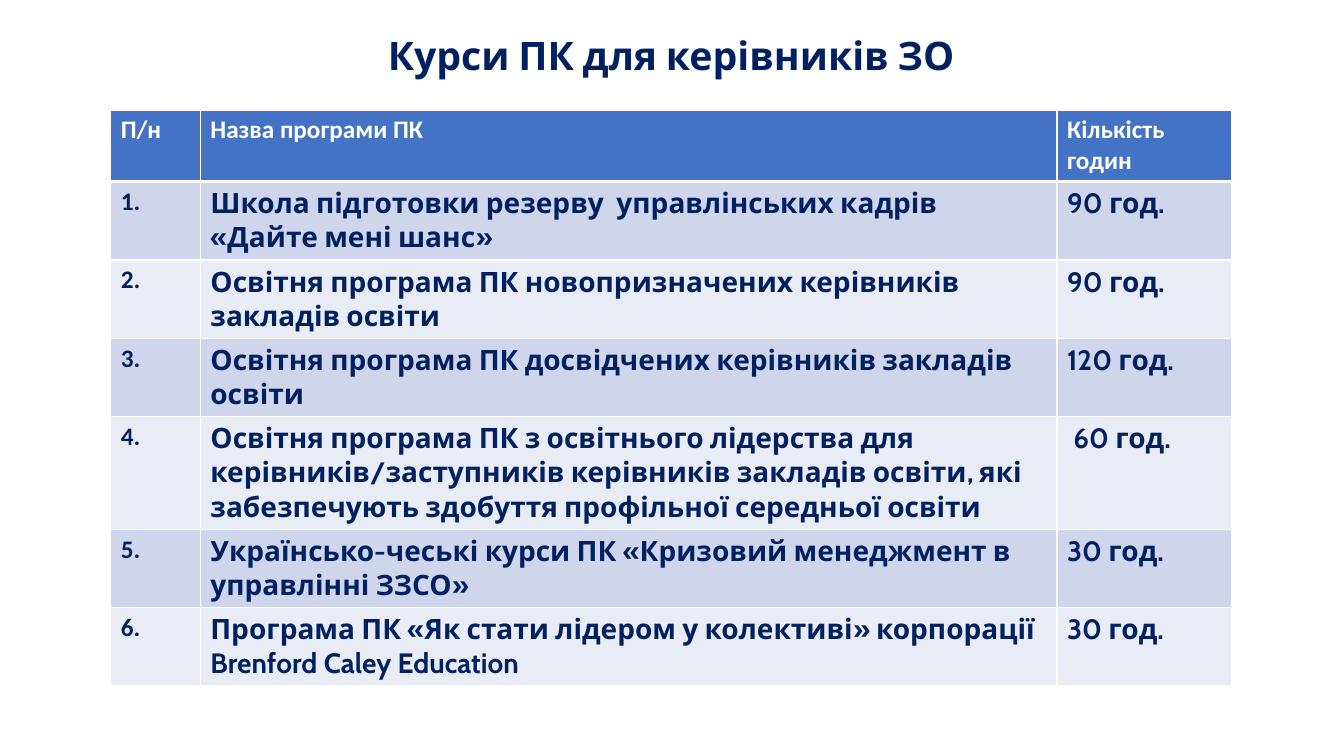
from dataclasses import dataclass

from lxml.etree import fromstring
from pptx import Presentation
from pptx.dml.color import RGBColor
from pptx.enum.text import MSO_ANCHOR, MSO_AUTO_SIZE, PP_ALIGN
from pptx.oxml.ns import nsdecls
from pptx.slide import Slide
from pptx.table import _Cell
from pptx.text.text import TextFrame
from pptx.util import Cm, Pt

NAVY, WHITE, HEADER_BLUE = "002060", "FFFFFF", "4472C4"
BANDS = ("CFD5EA", "E9EBF5")
LEFT, WIDTH = Cm(2.79), Cm(28.24)
COLUMN_WIDTHS = (2.26, 21.59, 4.39)
ROW_HEIGHT, TABLE_HEIGHT = Cm(1.03), Cm(14.3)
HEADINGS = ("П/н", "Назва програми ПК", "Кількість годин")


@dataclass(frozen=True)
class Course:
    name: str
    hours: str


@dataclass(frozen=True)
class TextStyle:
    font: str
    size: int
    color: str


HEADING_STYLE = TextStyle("Calibri", 18, WHITE)
NUMBER_STYLE = TextStyle("Calibri", 18, NAVY)
COURSE_STYLE = TextStyle("Cabin", 20, NAVY)
TITLE_STYLE = TextStyle("Cabin", 28, NAVY)

COURSES = (
    Course("Школа підготовки резерву  управлінських кадрів «Дайте мені шанс»", "90 год."),
    Course("Освітня програма ПК новопризначених керівників закладів освіти", "90 год."),
    Course("Освітня програма ПК досвідчених керівників закладів освіти", "120 год."),
    Course("Освітня програма ПК з освітнього лідерства для керівників/заступників "
           "керівників закладів освіти, які забезпечують здобуття профільної "
           "середньої освіти", " 60 год."),
    Course("Українсько-чеські курси ПК «Кризовий менеджмент в управлінні ЗЗСО»", "30 год."),
    Course("Програма ПК «Як стати лідером у колективі» корпорації "
           "Brenford Caley Education", "30 год."),
)


def rgb(color: str) -> RGBColor:
    return RGBColor.from_string(color)


def write(frame: TextFrame, text: str, style: TextStyle) -> None:
    frame.text = text
    for run in frame.paragraphs[0].runs:
        run.font.name = style.font
        run.font.size = Pt(style.size)
        run.font.bold = True
        run.font.color.rgb = rgb(style.color)


def set_borders(cell: _Cell, bottom: int, top: int) -> None:
    properties = cell._tc.get_or_add_tcPr()
    widths = {"lnL": 1, "lnR": 1, "lnT": top, "lnB": bottom}
    for index, (side, points) in enumerate(widths.items()):
        properties.insert(index, fromstring(
            f'<a:{side} {nsdecls("a")} w="{Pt(points)}"><a:solidFill>'
            f'<a:srgbClr val="{WHITE}"/></a:solidFill></a:{side}>'))


def add_title(slide: Slide) -> None:
    title = slide.shapes.title
    title.left, title.top, title.width, title.height = LEFT, Cm(0.56), WIDTH, Cm(1.42)
    frame = title.text_frame
    write(frame, "Курси ПК для керівників ЗО", TITLE_STYLE)
    frame.auto_size = MSO_AUTO_SIZE.NONE
    frame.vertical_anchor = MSO_ANCHOR.BOTTOM
    frame.margin_left = frame.margin_right = frame.margin_top = frame.margin_bottom = 0
    frame.paragraphs[0].alignment = PP_ALIGN.CENTER
    frame.paragraphs[0].line_spacing = 0.9


def add_courses(slide: Slide) -> None:
    rows = [HEADINGS] + [(f"{number}.", course.name, course.hours)
                         for number, course in enumerate(COURSES, 1)]
    holder = slide.shapes.add_table(len(rows), len(HEADINGS), LEFT, Cm(2.77),
                                    WIDTH, TABLE_HEIGHT)
    table = holder.table
    for column, width in zip(table.columns, COLUMN_WIDTHS):
        column.width = Cm(width)
    for row_index, texts in enumerate(rows):
        table.rows[row_index].height = ROW_HEIGHT
        is_header = row_index == 0
        fill = HEADER_BLUE if is_header else BANDS[(row_index - 1) % 2]
        for column_index, text in enumerate(texts):
            cell = table.cell(row_index, column_index)
            if is_header:
                style = HEADING_STYLE
            else:
                style = NUMBER_STYLE if column_index == 0 else COURSE_STYLE
            write(cell.text_frame, text, style)
            cell.fill.solid()
            cell.fill.fore_color.rgb = rgb(fill)
            set_borders(cell, bottom=3 if is_header else 1, top=3 if row_index == 1 else 1)
    # Rows grow with their text, so the frame is taller than their minimum heights
    holder.height = TABLE_HEIGHT


def main() -> None:
    presentation = Presentation()
    presentation.slide_width, presentation.slide_height = Cm(33.87), Cm(19.05)
    slide = presentation.slides.add_slide(presentation.slide_layouts.get_by_name("Title Only"))
    slide.background.fill.solid()
    slide.background.fill.fore_color.rgb = rgb(WHITE)
    add_title(slide)
    add_courses(slide)
    presentation.save("out.pptx")


if __name__ == "__main__":
    main()
